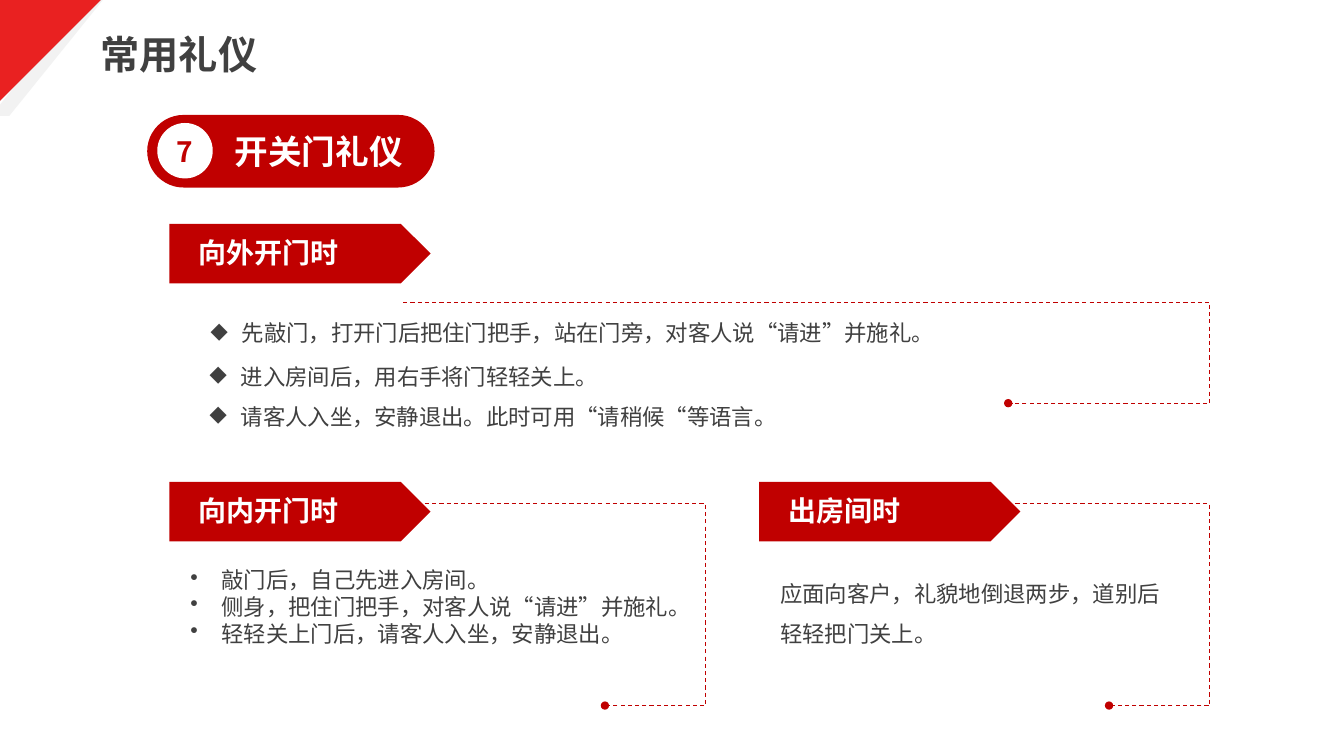
"""Build the slide on door etiquette."""
from dataclasses import dataclass

from lxml import etree
from pptx import Presentation
from pptx import util as u
from pptx.dml import color
from pptx.enum import dml, shapes, text
from pptx.oxml import ns

FONT = "Noto Sans CJK SC"
HUES = {"red": "C00000", "bright": "E92121", "pale": "F2F2F2",
        "white": "FFFFFF", "dark": "404040"}
KIND = shapes.MSO_SHAPE


@dataclass
class Note:
    x: float
    y: float
    w: float
    h: float
    lines: list[str]
    size: int = 16
    hue: str = "dark"
    bold: bool = False
    wrap: bool = True
    mark: str = ""
    space: float = 0


@dataclass
class Block:
    x: float
    y: float
    title: str
    width: float
    right: float
    base: float
    stop: float


@dataclass
class Form:
    kind: int
    x: float
    y: float
    w: float
    h: float
    hue: str
    adj: float | None = None
    turn: int = 0


@dataclass
class Band:
    hue: str
    dots: list[tuple[float, float]]


CORNER = [
    Form(KIND.PARALLELOGRAM, -0.09, 0, 1.11, 1.15, "pale", 0.836),
    Form(KIND.RIGHT_TRIANGLE, -0.31, 0, 0.67, 0.55, "pale", turn=180),
]
BANDS = [
    Band("red", [(0.41, 0.13), (0.63, 0.13), (0.09, 0.81), (0.13, 0.85),
                 (-0.1, 1.15), (-0.41, 1.15), (-0.19, 0.88)]),
    Band("bright", [(-0.14, 0), (0.87, 0), (0.63, 0.3), (-0.05, 1.15),
                    (-0.3, 1.15), (0.31, 0.39)]),
]
BADGE = [
    Form(KIND.ROUNDED_RECTANGLE, 1.46, 1.14, 2.85, 0.72, "red", 0.5),
    Form(KIND.OVAL, 1.56, 1.22, 0.55, 0.55, "white"),
]
BLOCKS = [
    Block(7.53, 4.78, "出房间时", 1.32, 11.98, 6.64, 11.46),
    Block(1.68, 4.78, "向内开门时", 1.6, 7.07, 6.64, 6.27),
    Block(1.68, 2.22, "向外开门时", 1.6, 11.98, 4.46, 9.73),
]
NOTES = [
    Note(0.9, 0.25, 1.77, 0.57, ["常用礼仪"], 28, bold=True, wrap=False),
    Note(2.23, 1.25, 2.08, 0.5, ["开关门礼仪"], 24, "white", True),
    Note(1.65, 1.29, 0.5, 0.44, ["7"], 20, "red", True),
    Note(7.64, 5.57, 4.15, 0.86,
         ["应面向客户，礼貌地倒退两步，道别后轻轻把门关上。"], space=1.5),
    Note(1.79, 5.57, 5.04, 0.91,
         ["敲门后，自己先进入房间。",
          "侧身，把住门把手，对客人说“请进”并施礼。",
          "轻轻关上门后，请客人入坐，安静退出。"], mark="•"),
    Note(1.99, 3.12, 8.26, 0.37,
         ["先敲门，打开门后把住门把手，站在门旁，对客人说“请进”并施礼。"],
         mark="◆"),
    Note(1.98, 3.55, 4.11, 0.37, ["进入房间后，用右手将门轻轻关上。"],
         wrap=False, mark="◆"),
    Note(1.98, 3.95, 7.77, 0.37,
         ["请客人入坐，安静退出。此时可用“请稍候“等语言。"], mark="◆"),
]


def tint(hue: str) -> color.RGBColor:
    """Return the named colour."""
    return color.RGBColor.from_string(HUES[hue])


def paint(item, hue: str) -> None:
    """Give a shape a plain fill."""
    item.shadow.inherit = False
    item.fill.solid()
    item.fill.fore_color.rgb = tint(hue)
    item.line.fill.background()


def put_form(slide, form: Form) -> None:
    """Draw a preset shape."""
    item = slide.shapes.add_shape(
        form.kind, *map(u.Inches, (form.x, form.y, form.w, form.h)))
    if form.adj is not None:
        item.adjustments[0] = form.adj
    item.rotation = form.turn
    paint(item, form.hue)


def trace(slide, dots: list[tuple[float, float]], close: bool):
    """Draw an outline through points in inches."""
    pen = slide.shapes.build_freeform(*dots[0], scale=u.Inches(1))
    pen.add_line_segments(dots[1:], close=close)
    return pen.convert_to_shape()


def put_note(slide, note: Note) -> None:
    """Draw a text box, with bullets if it has a mark."""
    box = slide.shapes.add_textbox(
        *map(u.Inches, (note.x, note.y, note.w, note.h)))
    frame = box.text_frame
    frame.word_wrap = note.wrap
    frame.auto_size = text.MSO_AUTO_SIZE.SHAPE_TO_FIT_TEXT
    frame.text = "\n".join(note.lines)
    for para in frame.paragraphs:
        if note.space:
            para.line_spacing = note.space
        if note.mark:
            props = para._p.get_or_add_pPr()
            props.set("marL", str(u.Inches(0.31)))
            props.set("indent", str(u.Inches(-0.31)))
            etree.SubElement(props, ns.qn("a:buChar"), char=note.mark)
        for run in para.runs:
            font = run.font
            font.size, font.bold = u.Pt(note.size), note.bold
            font.color.rgb = tint(note.hue)
            font.name = FONT
            etree.SubElement(run._r.get_or_add_rPr(), ns.qn("a:ea"),
                             typeface=FONT)


def put_block(slide, block: Block) -> None:
    """Draw a titled arrow and its dashed bracket."""
    x, y = block.x, block.y
    put_form(slide, Form(KIND.PENTAGON, x, y, 2.59, 0.59, "red"))
    put_note(slide, Note(x + 0.19, y + 0.07, block.width, 0.44,
                         [block.title], 20, "white", True, False))
    top = y + 0.33
    wire = trace(slide, [(x + 2.7, top), (block.right, top),
                         (block.right, block.base),
                         (block.stop, block.base)], False)
    wire.shadow.inherit = False
    wire.fill.background()
    wire.line.color.rgb = tint("red")
    wire.line.width = u.Pt(0.75)
    wire.line.dash_style = dml.MSO_LINE.DASH
    etree.SubElement(wire.line._get_or_add_ln(), ns.qn("a:tailEnd"),
                     type="oval")


def main() -> None:
    """Build and save the slide."""
    deck = Presentation()
    deck.slide_width, deck.slide_height = u.Inches(13.33), u.Inches(7.5)
    slide = deck.slides.add_slide(deck.slide_layouts[6])
    for form in CORNER:
        put_form(slide, form)
    for band in BANDS:
        paint(trace(slide, band.dots, True), band.hue)
    for form in BADGE:
        put_form(slide, form)
    for block in BLOCKS:
        put_block(slide, block)
    for note in NOTES:
        put_note(slide, note)
    deck.save("out.pptx")


if __name__ == "__main__":
    main()
